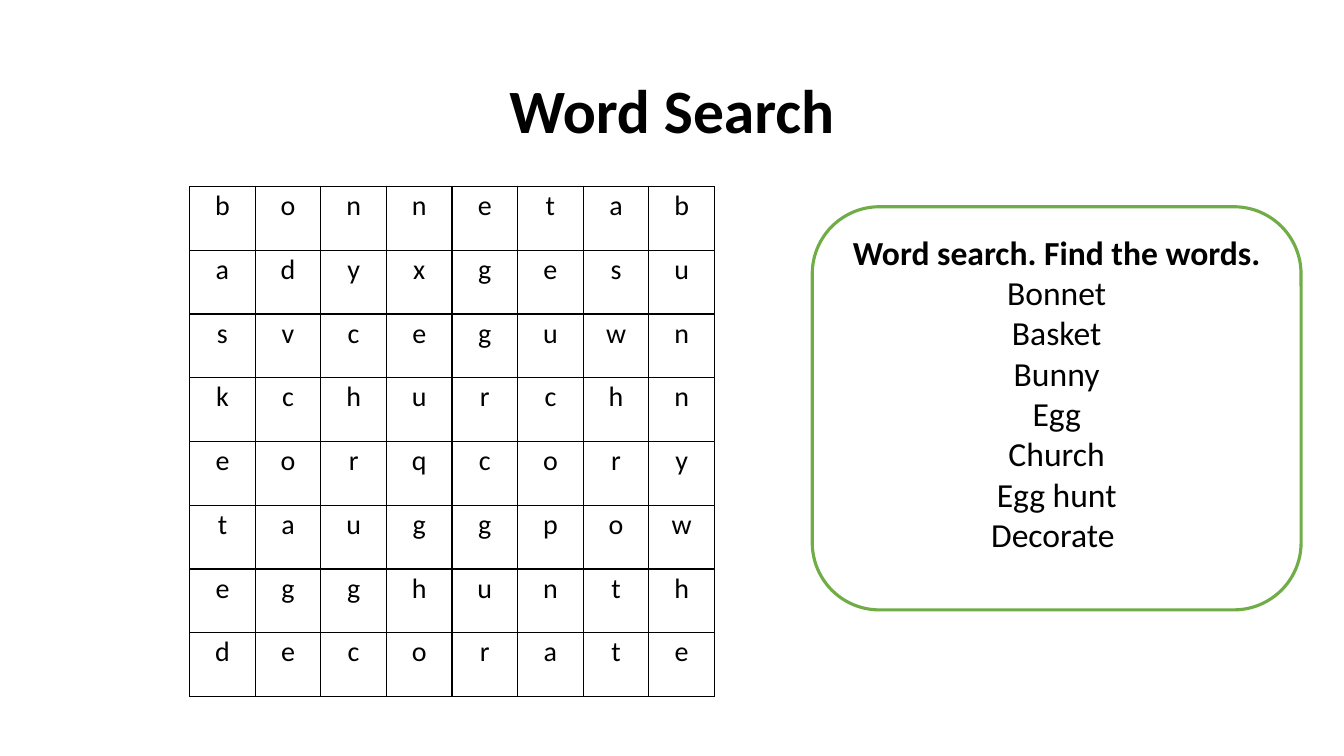
from lxml.etree import SubElement
from pptx import Presentation
from pptx.dml.color import RGBColor
from pptx.enum.shapes import MSO_SHAPE
from pptx.enum.text import MSO_ANCHOR, PP_ALIGN
from pptx.oxml.ns import qn
from pptx.util import Cm, Pt

COLORS = {"text": "000000", "paper": "FFFFFF", "border": "000000", "frame": "70AD47"}
FONT = "Calibri"
LETTERS = [
    "bonnetab",
    "adyxgesu",
    "svceguwn",
    "kchurchn",
    "eorqcory",
    "tauggpow",
    "egghunth",
    "decorate",
]
HEADING = "Word search. Find the words."
WORDS = ["Bonnet", "Basket", "Bunny", "Egg", "Church", "Egg hunt", "Decorate "]


def color(name):
    return RGBColor.from_string(COLORS[name])


def write(p, text, size, bold=False, spacing=1.0):
    p.text = text
    p.alignment = PP_ALIGN.CENTER
    p.line_spacing = spacing
    p.font.name = FONT
    p.font.size = Pt(size)
    p.font.bold = bold
    p.font.color.rgb = color("text")


def add_title(s, text, left, top, width, height):
    tf = s.shapes.add_textbox(Cm(left), Cm(top), Cm(width), Cm(height)).text_frame
    tf.word_wrap = True
    tf.vertical_anchor = MSO_ANCHOR.MIDDLE
    write(tf.paragraphs[0], text, 44, bold=True, spacing=0.9)


def set_borders(cell, width):
    tc_pr = cell._tc.get_or_add_tcPr()
    for index, side in enumerate(("a:lnL", "a:lnR", "a:lnT", "a:lnB")):
        line = tc_pr.makeelement(qn(side), {"w": str(Pt(width))})
        fill = SubElement(line, qn("a:solidFill"))
        SubElement(fill, qn("a:srgbClr"), val=COLORS["border"])
        # Border lines come before the cell fill
        tc_pr.insert(index, line)


def add_letter_grid(s, rows, left, top, width, height):
    frame = s.shapes.add_table(len(rows), len(rows[0]),
                               Cm(left), Cm(top), Cm(width), Cm(height))
    table = frame.table
    table.first_row = table.horz_banding = False
    for r, row in enumerate(rows):
        for c, letter in enumerate(row):
            cell = table.cell(r, c)
            cell.margin_left = cell.margin_right = Cm(0.19)
            cell.margin_top = cell.margin_bottom = 0
            cell.fill.background()
            set_borders(cell, 1)
            write(cell.text_frame.paragraphs[0], letter, 20, spacing=1.07)


def add_word_list(s, heading, words, left, top, width, height):
    sp = s.shapes.add_shape(MSO_SHAPE.ROUNDED_RECTANGLE,
                            Cm(left), Cm(top), Cm(width), Cm(height))
    sp.shadow.inherit = False
    sp.fill.solid()
    sp.fill.fore_color.rgb = color("paper")
    sp.line.color.rgb = color("frame")
    sp.line.width = Pt(2.25)
    tf = sp.text_frame
    tf.word_wrap = True
    tf.vertical_anchor = MSO_ANCHOR.MIDDLE
    # A deeper bottom margin lifts the list above the middle
    tf.margin_bottom = Cm(0.9)
    write(tf.paragraphs[0], heading, 24, bold=True)
    for word in words:
        write(tf.add_paragraph(), word, 24)


def main():
    prs = Presentation()
    prs.slide_width, prs.slide_height = Cm(33.87), Cm(19.05)
    s = prs.slides.add_slide(prs.slide_layouts[6])

    # Title
    add_title(s, "Word Search", 2.33, 1.01, 29.21, 3.68)
    # Puzzle
    add_letter_grid(s, LETTERS, 4.78, 4.7, 13.23, 12.85)
    # Words to find
    add_word_list(s, HEADING, WORDS, 20.47, 5.21, 12.32, 10.16)

    prs.save("out.pptx")


if __name__ == "__main__":
    main()
